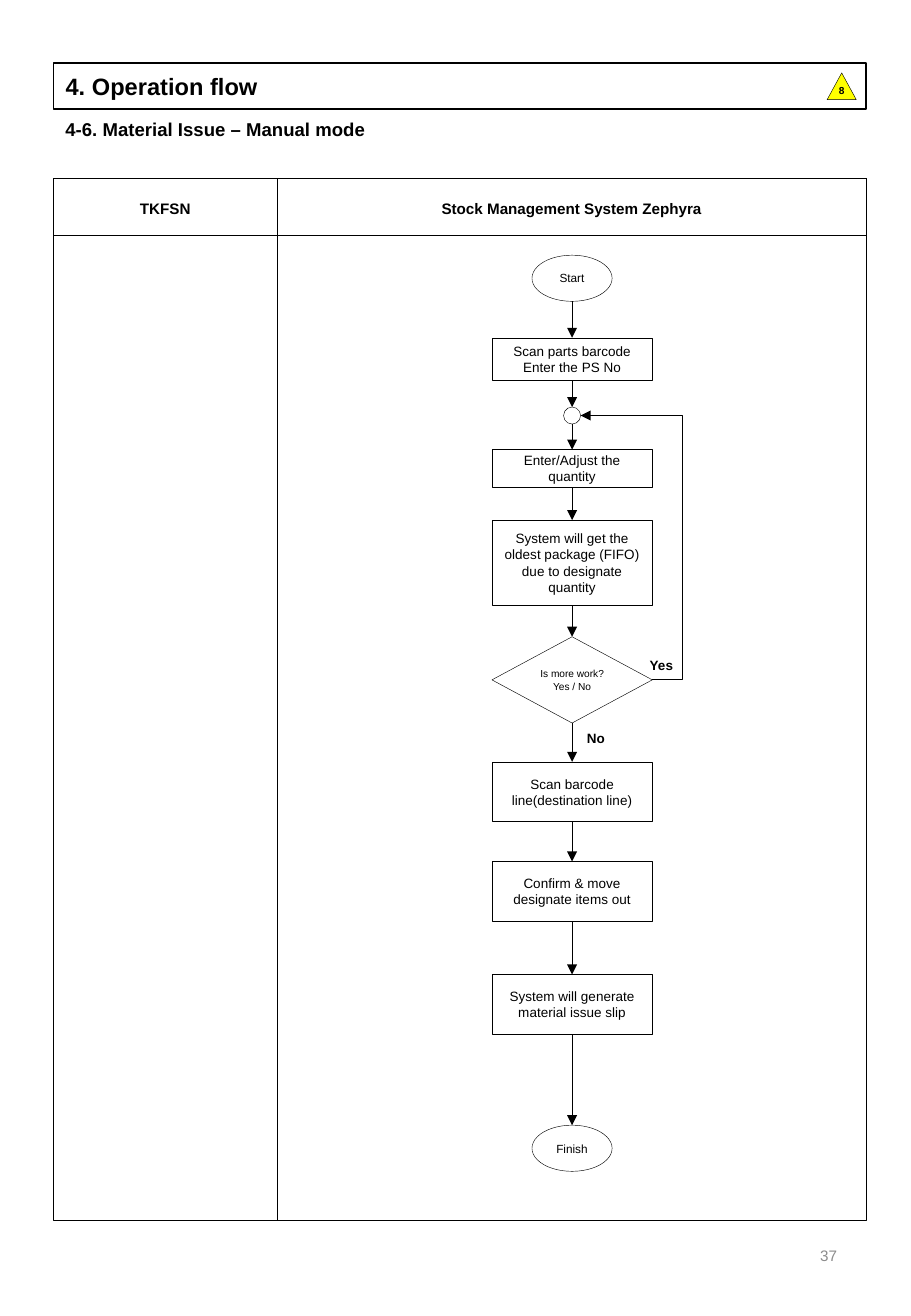
from lxml import etree
from pptx import Presentation
from pptx.dml.color import RGBColor
from pptx.enum import shapes, text
from pptx.oxml.ns import qn
from pptx.util import Inches, Pt

BLACK = "000000"
CENTRE = 4.71
LEFT, WIDTH = 0.44, 6.69
TABLE_TOP, TABLE_HEIGHT, HEADER_HEIGHT = 1.47, 8.57, 0.47
DIVIDER = 2.28
SHAPE = shapes.MSO_SHAPE
ALIGN = text.PP_ALIGN

STEPS = [
    (SHAPE.OVAL, 2.1, 0.66, 0.38, "Start", 7),
    (SHAPE.RECTANGLE, 2.78, 1.32, 0.35, "Scan parts barcode\nEnter the PS No", 8),
    (SHAPE.OVAL, 3.35, 0.14, 0.14, "", 8),
    (SHAPE.RECTANGLE, 3.7, 1.32, 0.31, "Enter/Adjust the quantity", 8),
    (SHAPE.RECTANGLE, 4.28, 1.32, 0.7,
     "System will get the oldest package (FIFO) due to designate quantity", 8),
    (SHAPE.FLOWCHART_DECISION, 5.24, 1.32, 0.71, "Is more work?\nYes / No", 6),
    (SHAPE.RECTANGLE, 6.27, 1.32, 0.49, "Scan barcode line(destination line)", 8),
    (SHAPE.RECTANGLE, 7.09, 1.32, 0.49, "Confirm & move designate items out", 8),
    (SHAPE.RECTANGLE, 8.02, 1.32, 0.49, "System will generate material issue slip", 8),
    (SHAPE.OVAL, 9.26, 0.66, 0.38, "Finish", 7),
]


def rgb(value):
    return RGBColor.from_string(value)


def write(box, words, size, bold=False, align=ALIGN.CENTER, color=BLACK,
          anchor=text.MSO_ANCHOR.MIDDLE):
    frame = box.text_frame
    frame.text = words
    frame.word_wrap = True
    frame.auto_size = text.MSO_AUTO_SIZE.NONE
    frame.vertical_anchor = anchor
    for para in frame.paragraphs:
        para.alignment = align
        for span in para.runs:
            span.font.name = "Arial"
            span.font.size = Pt(size)
            span.font.bold = bold
            span.font.color.rgb = rgb(color)


def outline(shape, width):
    shape.line.color.rgb = rgb(BLACK)
    shape.line.width = Pt(width)


def add_label(page, left, top, width, height, words, size, **style):
    box = page.shapes.add_textbox(
        Inches(left), Inches(top), Inches(width), Inches(height))
    write(box, words, size, **style)
    return box


def add_outlined(page, kind, left, top, width, height, fill=None):
    shape = page.shapes.add_shape(
        kind, Inches(left), Inches(top), Inches(width), Inches(height))
    shape.shadow.inherit = False
    if fill:
        shape.fill.solid()
        shape.fill.fore_color.rgb = rgb(fill)
    else:
        shape.fill.background()
    outline(shape, 0.25)
    return shape


def add_line(page, start, end, kind=shapes.MSO_CONNECTOR.STRAIGHT, arrow=False):
    line = page.shapes.add_connector(
        kind, *(Inches(value) for value in (*start, *end)))
    outline(line, 0.5)
    if arrow:
        etree.SubElement(line.line._get_or_add_ln(), qn("a:tailEnd"), type="triangle")
    etree.SubElement(line._element.spPr, qn("a:effectLst"))
    return line


def add_title(page):
    title = page.shapes.title
    title.left, title.top = Inches(LEFT), Inches(0.52)
    title.width, title.height = Inches(WIDTH), Inches(0.38)
    outline(title, 1)
    write(title, "4. Operation flow", 14, bold=True, align=ALIGN.LEFT)
    add_label(page, LEFT, 0.92, WIDTH, 0.29, "4-6. Material Issue – Manual mode", 11,
              bold=True, align=ALIGN.LEFT, anchor=text.MSO_ANCHOR.TOP)


def add_revision_mark(page):
    mark = add_outlined(page, SHAPE.ISOSCELES_TRIANGLE, 6.81, 0.6, 0.24, 0.22, "FFFF00")
    write(mark, "8", 6, bold=True)
    mark.text_frame.margin_top = 0


def add_lanes(page):
    for height in (TABLE_HEIGHT, HEADER_HEIGHT):
        add_outlined(page, SHAPE.RECTANGLE, LEFT, TABLE_TOP, WIDTH, height)
    add_line(page, (DIVIDER, TABLE_TOP), (DIVIDER, TABLE_TOP + TABLE_HEIGHT))
    right = LEFT + WIDTH
    for start, end, words in [(LEFT, DIVIDER, "TKFSN"),
                              (DIVIDER, right, "Stock Management System Zephyra")]:
        add_label(page, start, TABLE_TOP + 0.01, end - start, HEADER_HEIGHT,
                  words, 9, bold=True)


def add_step(page, kind, top, width, height, words, size):
    step = add_outlined(page, kind, CENTRE - width / 2, top, width, height)
    if words:
        write(step, words, size)
    if kind == SHAPE.FLOWCHART_DECISION:
        step.text_frame.margin_left = step.text_frame.margin_right = 0
    return step


def add_flow(page):
    steps = [add_step(page, *step) for step in STEPS]
    for index in range(len(STEPS) - 1):
        kind, top, _, height, _, _ = STEPS[index]
        arrow = add_line(page, (CENTRE, top + height), (CENTRE, STEPS[index + 1][1]),
                         arrow=True)
        if kind != SHAPE.OVAL:
            arrow.begin_connect(steps[index], 2)
        arrow.end_connect(steps[index + 1], 0)


def add_loop(page):
    loop = add_line(page, (5.37, 5.59), (4.78, 3.42),
                    shapes.MSO_CONNECTOR.ELBOW, arrow=True)
    guides = loop._element.spPr.find(qn("a:prstGeom")).get_or_add_avLst()
    etree.SubElement(guides, qn("a:gd"), name="adj1", fmla="val -42200")
    for left, top, words in [(5.19, 5.36, "Yes"), (4.65, 5.96, "No")]:
        add_label(page, left, top, 0.51, 0.23, words, 8, bold=True)


def main():
    deck = Presentation()
    deck.slide_width, deck.slide_height = Inches(7.5), Inches(10.83)
    page = deck.slides.add_slide(deck.slide_layouts[5])
    add_title(page)
    add_revision_mark(page)
    add_lanes(page)
    add_flow(page)
    add_loop(page)
    add_label(page, 5.3, 10.04, 1.69, 0.58, "37", 9, align=ALIGN.RIGHT, color="8C8C8C")
    deck.save("out.pptx")


if __name__ == "__main__":
    main()
